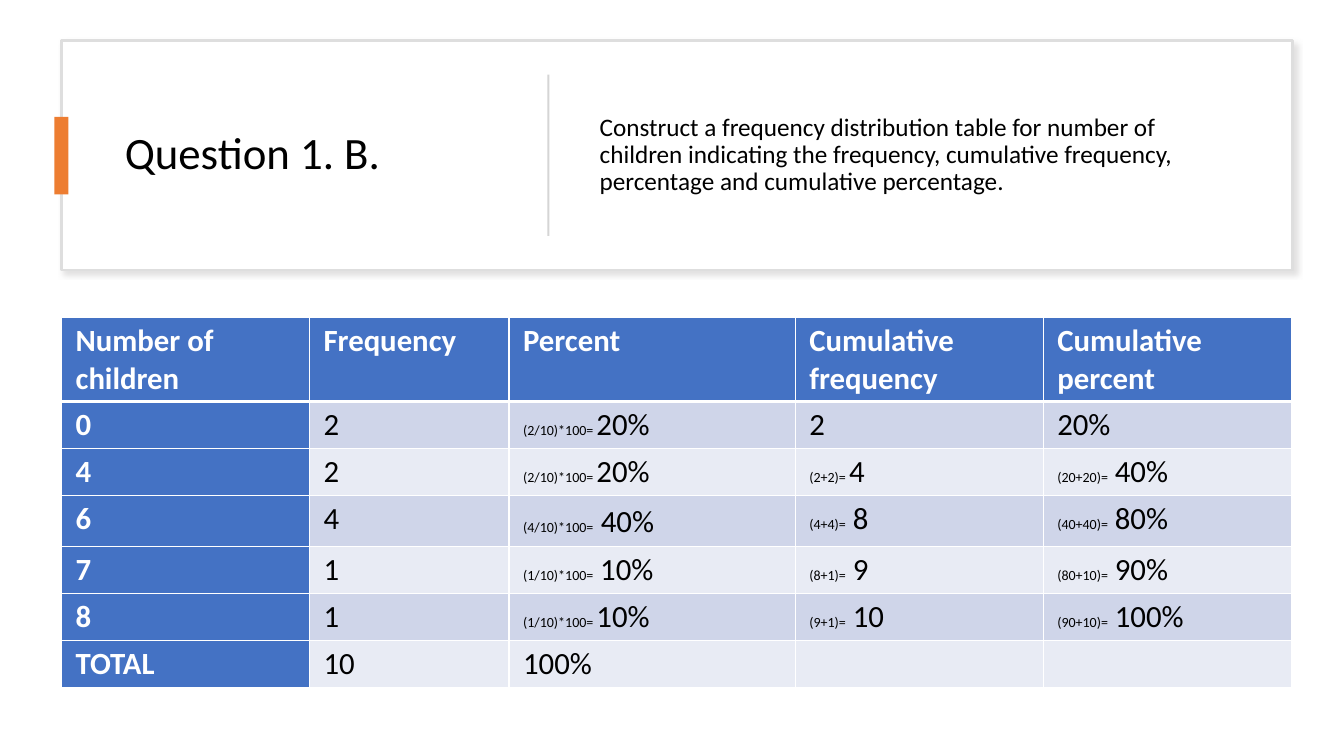
from lxml.etree import SubElement as Sub
from pptx import Presentation
from pptx.dml.color import RGBColor as RGB
from pptx.enum.shapes import MSO_SHAPE as Shape
from pptx.enum.text import MSO_ANCHOR as Anchor
from pptx.oxml.ns import qn
from pptx.util import Inches, Pt

BLACK = RGB(0x00, 0x00, 0x00)
WHITE = RGB(0xFF, 0xFF, 0xFF)
BLUE = RGB(0x44, 0x72, 0xC4)
ORANGE = RGB(0xED, 0x7D, 0x31)
EDGE = RGB(0xDE, 0xDE, 0xDE)
RULE = RGB(0xD5, 0xD5, 0xD5)
SHADE = RGB(0xC5, 0xC3, 0xC3)
BANDS = RGB(0xCF, 0xD5, 0xE9), RGB(0xE8, 0xEB, 0xF4)

deck = Presentation()
deck.slide_width, deck.slide_height = Inches(13.33), Inches(7.5)
slide = deck.slides.add_slide(deck.slide_layouts[6])
shapes = slide.shapes
COL, ROW = deck.slide_width / 100, deck.slide_height / 100


def area(x, y, wide, high):
    """Turn columns and rows of a 100 by 100 grid into lengths."""
    return int(x * COL), int(y * ROW), int(wide * COL), int(high * ROW)


def write(frame, text, size=22, color=BLACK, bold=False, space=None):
    """Write one paragraph; a bar ends the small working before a result."""
    frame.word_wrap = True
    para = frame.paragraphs[0]
    para.line_spacing = space
    parts = text.split("|")
    for i, part in enumerate(parts):
        run = para.add_run()
        run.text = part
        font = run.font
        font.name, font.bold, font.color.rgb = "Calibri", bold, color
        small = i < len(parts) - 1
        font.size = Pt(24 if part == " " else 10 if small else size)


# Heading card
LEFT, WIDE = 4.58, 91.58
for place, fill in (
    ((LEFT, 5.33, WIDE, 30.4), WHITE),
    ((4.05, 15.47, 1.05, 10.27), ORANGE),
    ((40.73, 9.87, 0.15, 21.33), RULE),
):
    rect = shapes.add_shape(Shape.RECTANGLE, *area(*place))
    rect.shadow.inherit = False
    rect.fill.solid()
    rect.fill.fore_color.rgb = fill
    if fill == WHITE:
        rect.line.color.rgb, rect.line.width = EDGE, Pt(2)
        glow = Sub(rect._element.spPr.find(qn("a:effectLst")), qn("a:outerShdw"),
                   blurRad=str(Pt(4)), dist=str(Pt(3)), dir="2700000",
                   algn="tl", rotWithShape="0")
        tint = Sub(glow, qn("a:srgbClr"), val=str(SHADE))
        Sub(tint, qn("a:alpha"), val="50000")
    else:
        rect.line.fill.background()

for x, wide, size, text in (
    (8.55, 29.18, 32, "Question 1. B."),
    (43.88, 49.2, 18, "Construct a frequency distribution table for number of "
     "children indicating the frequency, cumulative frequency, "
     "percentage and cumulative percentage."),
):
    frame = shapes.add_textbox(*area(x, 8.53, wide, 24)).text_frame
    frame.vertical_anchor = Anchor.MIDDLE
    write(frame, text, size=size, space=0.9)

# Frequency table
DATA = [
    ("Number of children", "Frequency", "Percent",
     "Cumulative frequency", "Cumulative percent"),
    ("0", "2", "(2/10)*100= |20%", "2", "20%"),
    ("4", "2", "(2/10)*100= |20%", "(2+2)= |4", "(20+20)=| 40%"),
    ("6", "4", "(4/10)*100=| |40%", "(4+4)=| 8", "(40+40)=| 80%"),
    ("7", "1", "(1/10)*100=| 10%", "(8+1)=| 9", "(80+10)=| 90%"),
    ("8", "1", "(1/10)*100= |10%", "(9+1)=| 10", "(90+10)=| 100%"),
    ("TOTAL", "10", "100%", "", ""),
]
COLS = 18.45, 14.85, 21.3, 18.45, 18.45
HEAD, LINE = 10.8, 5.87

grid = shapes.add_table(len(DATA), len(COLS),
                        *area(LEFT, 42, WIDE, HEAD + 6 * LINE)).table
grid.first_col = True
for col, wide in zip(grid.columns, COLS):
    col.width = int(wide * COL)
for r, texts in enumerate(DATA):
    grid.rows[r].height = int((LINE if r else HEAD) * ROW)
    for c, text in enumerate(texts):
        cell = grid.cell(r, c)
        cell.margin_left = cell.margin_right = Inches(0.14)
        cell.margin_top = cell.margin_bottom = Inches(0.05)
        for side in "LRTB":
            thick = (r, side) in ((0, "B"), (1, "T"))
            edge = Sub(cell._tc.get_or_add_tcPr(), qn("a:ln" + side),
                       w=str(Pt(3 if thick else 0.96)))
            paint = Sub(edge, qn("a:solidFill"))
            Sub(paint, qn("a:srgbClr"), val=str(WHITE))
        label = r == 0 or c == 0
        cell.fill.solid()
        cell.fill.fore_color.rgb = BLUE if label else BANDS[(r - 1) % 2]
        if text:
            write(cell.text_frame, text, color=WHITE if label else BLACK, bold=label)

deck.save("out.pptx")
